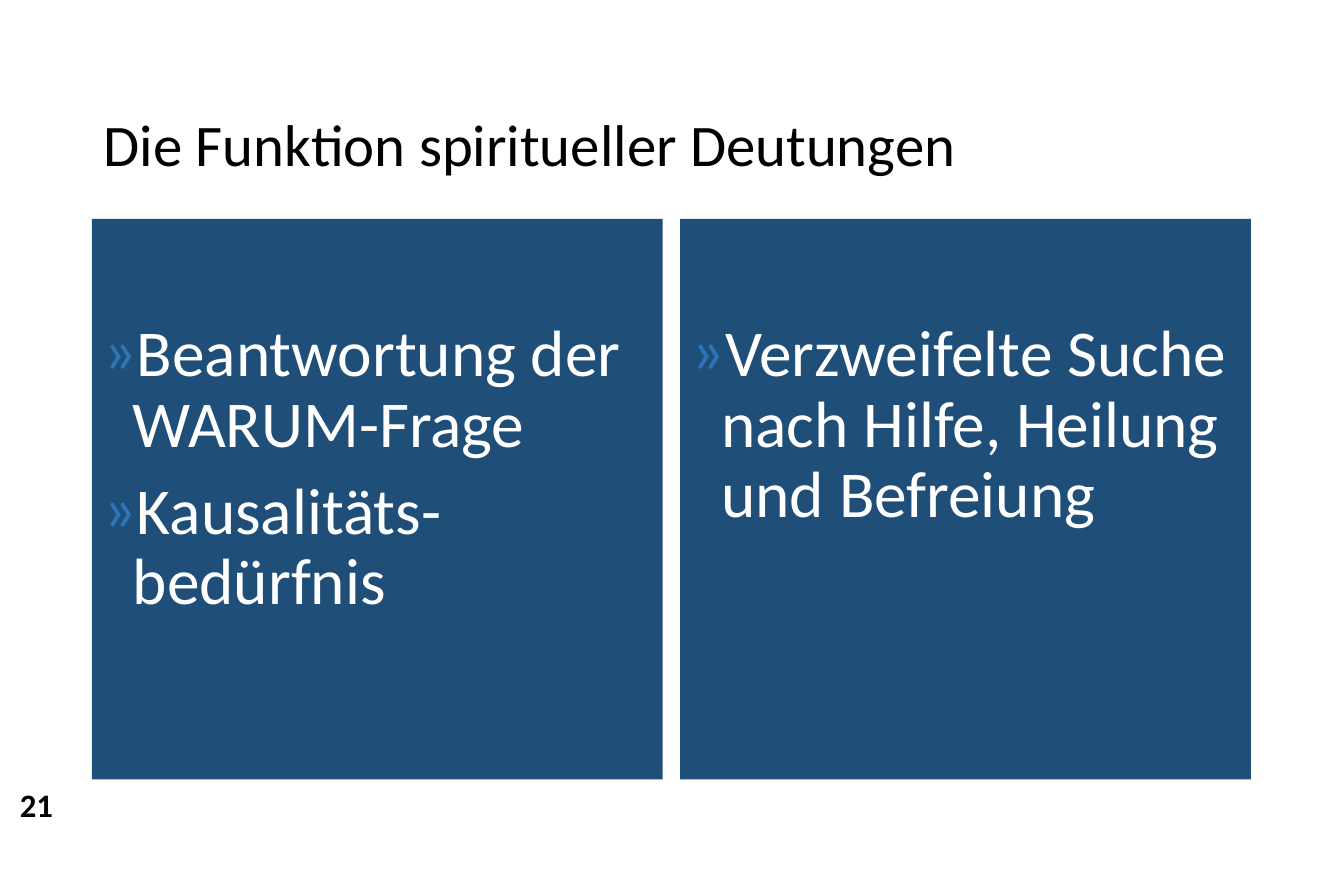
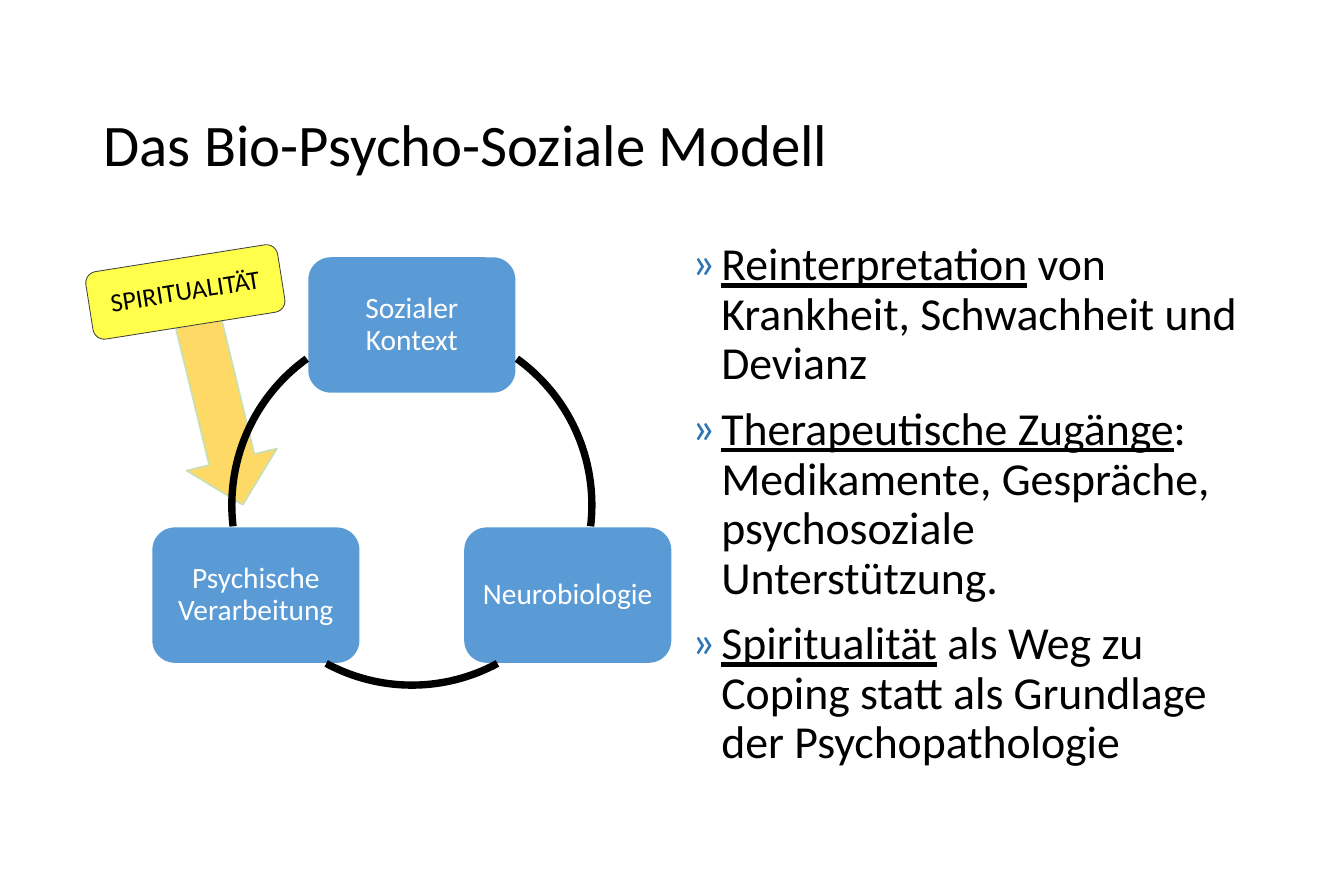
from dataclasses import dataclass
from math import cos, radians, sin

from lxml.etree import SubElement
from pptx import Presentation
from pptx.dml.color import RGBColor
from pptx.enum.shapes import MSO_SHAPE as Preset
from pptx.enum.text import MSO_ANCHOR as Anchor, MSO_AUTO_SIZE as AutoSize, PP_ALIGN as Align
from pptx.oxml.ns import qn
from pptx.presentation import Presentation as Deck
from pptx.shapes.autoshape import Shape
from pptx.slide import Slide
from pptx.text.text import _Paragraph as Paragraph
from pptx.util import Inches, Pt


@dataclass(frozen=True)
class Theme:
    font: str = "Calibri"
    text: str = "000000"
    light_text: str = "FFFFFF"
    panel: str = "1F4E79"
    bullet: str = "2E75B6"
    node: str = "5B9BD5"
    arrow: str = "FFD966"
    arrow_edge: str = "C5E0B4"
    label: str = "FFFF4B"
    label_edge: str = "404040"
    title_size: int = 36
    panel_size: int = 40
    list_size: int = 28
    number_size: int = 20
    node_size: int = 18
    label_size: int = 16
    line_spacing: float = 0.9
    paragraph_gap: int = 10


@dataclass(frozen=True)
class Area:
    left: float
    top: float
    width: float
    height: float


@dataclass(frozen=True)
class Item:
    """A bullet: an underlined lead, then plain text."""
    rest: str
    lead: str = ""


@dataclass(frozen=True)
class Node:
    text: str
    angle: float


@dataclass(frozen=True)
class Arc:
    start: float
    end: float


THEME = Theme()
TITLE = Area(0.78, 0.84, 9.85, 0.82)
COLUMN_WIDTH, COLUMN_HEIGHT = 4.85, 4.76
LEFT_X, RIGHT_X = 0.78, 5.78
PANEL_TOP, LIST_TOP = 1.86, 2.0
PANEL_INSET = 0.86

CENTER_X, CENTER_Y, RADIUS = 3.5, 4.29, 1.53
NODE_WIDTH, NODE_HEIGHT = 1.76, 1.15

PANELS = (
    (LEFT_X, (Item("Beantwortung der WARUM-Frage"), Item("Kausalitäts-\nbedürfnis"))),
    (RIGHT_X, (Item("Verzweifelte Suche nach Hilfe, Heilung und Befreiung"),)),
)
APPROACHES = (
    Item(" von Krankheit, Schwachheit und Devianz", "Reinterpretation"),
    Item(": Medikamente, Gespräche, psychosoziale Unterstützung.", "Therapeutische Zugänge"),
    Item(" als Weg zu Coping statt als Grundlage der Psychopathologie", "Spiritualität"),
)
NODES = (
    Node("Sozialer\nKontext", -90),
    Node("Neurobiologie", 30),
    Node("Psychische\nVerarbeitung", 150),
)
ARCS = (Arc(305.7, 6.8), Arc(61.6, 118.4), Arc(173.2, 234.3))


def color(value: str) -> RGBColor:
    return RGBColor.from_string(value)


def place(shape: Shape, area: Area) -> None:
    shape.left, shape.top = Inches(area.left), Inches(area.top)
    shape.width, shape.height = Inches(area.width), Inches(area.height)


def format_runs(paragraph: Paragraph, size: int, text_color: str, bold: bool = False) -> None:
    for span in paragraph.runs:
        span.font.name = THEME.font
        span.font.size = Pt(size)
        span.font.bold = bold
        span.font.color.rgb = color(text_color)


def add_bullet(paragraph: Paragraph) -> None:
    properties = paragraph._p.get_or_add_pPr()
    properties.set("marL", str(Inches(0.25)))
    properties.set("indent", str(Inches(-0.25)))
    bullet_color = SubElement(properties, qn("a:buClr"))
    SubElement(bullet_color, qn("a:srgbClr"), val=THEME.bullet)
    SubElement(properties, qn("a:buFont"), typeface=THEME.font)
    SubElement(properties, qn("a:buChar"), char="»")


def fill_list(box: Shape, items: tuple[Item, ...], size: int, text_color: str) -> None:
    frame = box.text_frame
    frame.word_wrap = True
    frame.auto_size = AutoSize.NONE
    frame.vertical_anchor = Anchor.TOP
    for index, item in enumerate(items):
        paragraph = frame.add_paragraph() if index else frame.paragraphs[0]
        add_bullet(paragraph)
        paragraph.line_spacing = THEME.line_spacing
        paragraph.space_before = Pt(THEME.paragraph_gap if index else 0)
        if item.lead:
            paragraph.add_run().text = item.lead
            paragraph.runs[0].font.underline = True
            paragraph.add_run().text = item.rest
        else:
            paragraph.text = item.rest
        format_runs(paragraph, size, text_color)


def add_preset(slide: Slide, preset: Preset, area: Area, fill: str = "", line: str = "",
               line_width: float = 1, rotation: float = 0) -> Shape:
    """Add a shape without shadow; an empty colour means no fill or line."""
    shape = slide.shapes.add_shape(preset, 0, 0, 0, 0)
    place(shape, area)
    shape.shadow.inherit = False
    shape.rotation = rotation
    if fill:
        shape.fill.solid()
        shape.fill.fore_color.rgb = color(fill)
    else:
        shape.fill.background()
    if line:
        shape.line.color.rgb = color(line)
        shape.line.width = Pt(line_width)
    else:
        shape.line.fill.background()
    return shape


def center_text(shape: Shape, text: str, size: int, text_color: str) -> None:
    frame = shape.text_frame
    frame.word_wrap = True
    frame.vertical_anchor = Anchor.MIDDLE
    frame.margin_left = frame.margin_right = Inches(0.07)
    paragraph = frame.paragraphs[0]
    paragraph.text = text
    paragraph.alignment = Align.CENTER
    paragraph.line_spacing = THEME.line_spacing
    format_runs(paragraph, size, text_color)


def add_titled_slide(deck: Deck, layout: str, title: str) -> Slide:
    slide = deck.slides.add_slide(deck.slide_layouts.get_by_name(layout))
    box = slide.shapes.title
    place(box, TITLE)
    frame = box.text_frame
    frame.auto_size = AutoSize.NONE
    frame.vertical_anchor = Anchor.MIDDLE
    frame.text = title
    paragraph = frame.paragraphs[0]
    paragraph.alignment = Align.LEFT
    paragraph.line_spacing = THEME.line_spacing
    format_runs(paragraph, THEME.title_size, THEME.text)
    return slide


def add_page_number(slide: Slide, number: str) -> None:
    box = slide.shapes.add_textbox(0, 0, 0, 0)
    place(box, Area(0.07, 6.62, 1.09, 0.55))
    box.text_frame.word_wrap = True
    box.text_frame.text = number
    format_runs(box.text_frame.paragraphs[0], THEME.number_size, THEME.text, bold=True)


def add_cycle(slide: Slide) -> None:
    """Draw the nodes on a circle and the arcs between them."""
    circle = Area(CENTER_X - RADIUS, CENTER_Y - RADIUS, 2 * RADIUS, 2 * RADIUS)
    for node in NODES:
        center_x = CENTER_X + RADIUS * cos(radians(node.angle))
        center_y = CENTER_Y + RADIUS * sin(radians(node.angle))
        area = Area(center_x - NODE_WIDTH / 2, center_y - NODE_HEIGHT / 2,
                    NODE_WIDTH, NODE_HEIGHT)
        shape = add_preset(slide, Preset.ROUNDED_RECTANGLE, area, THEME.node)
        center_text(shape, node.text, THEME.node_size, THEME.light_text)
    for arc in ARCS:
        shape = add_preset(slide, Preset.ARC, circle, line=THEME.text, line_width=4.5)
        # Angles are stored in 1/60000 degree, adjustments in 1/100000.
        shape.adjustments[0] = arc.start * 0.6
        shape.adjustments[1] = arc.end * 0.6


def build_function_slide(deck: Deck) -> None:
    slide = add_titled_slide(deck, "Two Content", "Die Funktion spiritueller Deutungen")
    for index, (left, items) in enumerate(PANELS, start=1):
        panel = slide.placeholders[index]
        place(panel, Area(left, PANEL_TOP, COLUMN_WIDTH, COLUMN_HEIGHT))
        panel.fill.solid()
        panel.fill.fore_color.rgb = color(THEME.panel)
        fill_list(panel, items, THEME.panel_size, THEME.light_text)
        panel.text_frame.margin_top = Inches(PANEL_INSET)
    add_page_number(slide, "21")


def build_model_slide(deck: Deck) -> None:
    slide = add_titled_slide(deck, "Title and Content", "Das Bio-Psycho-Soziale Modell")
    body = slide.placeholders[1]
    place(body, Area(RIGHT_X, LIST_TOP, COLUMN_WIDTH, COLUMN_HEIGHT))
    fill_list(body, APPROACHES, THEME.list_size, THEME.text)
    add_preset(slide, Preset.RIGHT_ARROW, Area(1.08, 3.12, 1.59, 0.79),
               THEME.arrow, THEME.arrow_edge, rotation=76.3)
    add_cycle(slide)
    label = add_preset(slide, Preset.ROUNDED_RECTANGLE, Area(0.75, 2.19, 1.65, 0.58),
                       THEME.label, THEME.label_edge, 0.5, rotation=-9)
    center_text(label, "SPIRITUALITÄT", THEME.label_size, THEME.text)


def main() -> None:
    deck = Presentation()
    deck.slide_width, deck.slide_height = Inches(11.42), Inches(7.5)
    build_function_slide(deck)
    build_model_slide(deck)
    deck.save("out.pptx")


if __name__ == "__main__":
    main()
